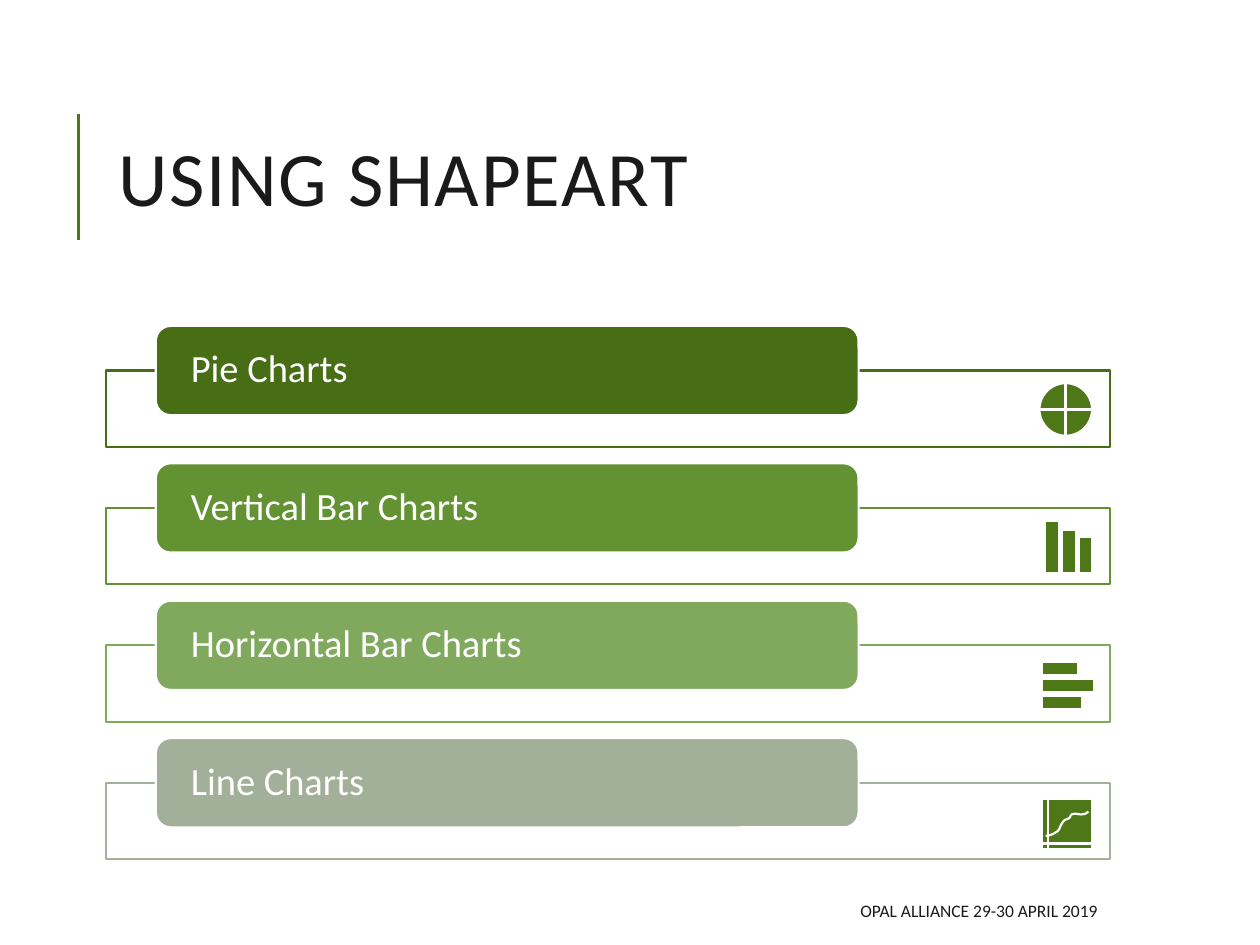
from dataclasses import dataclass

from lxml.etree import SubElement
from pptx import Presentation
from pptx.dml.color import RGBColor
from pptx.enum.shapes import MSO_CONNECTOR, MSO_SHAPE
from pptx.enum.text import MSO_ANCHOR, PP_ALIGN
from pptx.oxml.ns import qn
from pptx.util import Cm, Pt


@dataclass(frozen=True)
class Theme:
    """Hold the colours, font and type sizes."""
    font: str = "Calibri"
    ink: str = "1A1A1A"
    paper: str = "FFFFFF"
    accent: str = "4E7817"
    title: int = 44
    label: int = 22
    foot: int = 10


THEME = Theme()


def write(shape, text, size, color, align=PP_ALIGN.LEFT, lead=1.0, track=0, inset=None):
    """Set one middle-anchored paragraph of text in a shape."""
    frame = shape.text_frame
    frame.word_wrap = True
    frame.vertical_anchor = MSO_ANCHOR.MIDDLE
    if inset is not None:
        frame.margin_left = frame.margin_right = Cm(inset)
        frame.margin_top = frame.margin_bottom = 0
    para = frame.paragraphs[0]
    para.alignment = align
    para.line_spacing = lead
    run = para.add_run()
    run.text = text
    run.font.name = THEME.font
    run.font.size = Pt(size)
    run.font.color.rgb = RGBColor.from_string(color)
    if track:
        run._r.get_or_add_rPr().set("spc", str(track))


def place(slide, kind, x, y, w, h, fill, line, width=1.5):
    """Add a preset shape with a flat fill and outline."""
    shape = slide.shapes.add_shape(kind, Cm(x), Cm(y), Cm(w), Cm(h))
    shape.shadow.inherit = False
    shape.fill.solid()
    shape.fill.fore_color.rgb = RGBColor.from_string(fill)
    shape.line.color.rgb = RGBColor.from_string(line)
    shape.line.width = Pt(width)
    return shape


def mark(slide, kind, x, y, w, h):
    """Add one accent part of an icon."""
    return place(slide, kind, x, y, w, h, THEME.accent, THEME.paper)


def pie_icon(slide, x, y):
    """Draw a quartered disc."""
    mark(slide, MSO_SHAPE.FLOWCHART_OR, x - 0.05, y + 0.25, 1.07, 1.07)


def column_icon(slide, x, y):
    """Draw three columns on a shared base."""
    for i, tall in enumerate((1.07, 0.89, 0.74)):
        mark(slide, MSO_SHAPE.RECTANGLE, x + 0.07 + i * 0.34, y + 1.32 - tall, 0.28, tall)


def bar_icon(slide, x, y):
    """Draw three bars from a shared left edge."""
    for i, wide in enumerate((0.74, 1.07, 0.81)):
        mark(slide, MSO_SHAPE.RECTANGLE, x, y + 0.33 + i * 0.34, wide, 0.28)


def bend(a, b, c, d, steps=8):
    """Return points along a cubic curve, after its start."""
    spots = []
    for i in range(1, steps + 1):
        t = i / steps
        u = 1 - t
        spots.append(tuple(
            u**3 * p + 3 * u * u * t * q + 3 * u * t * t * r + t**3 * s
            for p, q, r, s in zip(a, b, c, d)))
    return spots


def line_icon(slide, x, y):
    """Draw a chart frame with a rising curve."""
    y += 0.33
    mark(slide, MSO_SHAPE.FLOWCHART_INTERNAL_STORAGE, x, y, 1.02, 1.02).rotation = 270
    knots = [(0.08, 0.74), (0.15, 0.74), (0.23, 0.71), (0.3, 0.66),
             (0.36, 0.64), (0.38, 0.51), (0.43, 0.46),
             (0.46, 0.41), (0.51, 0.41), (0.56, 0.38),
             (0.58, 0.36), (0.58, 0.3), (0.64, 0.3),
             (0.69, 0.28), (0.79, 0.33), (0.84, 0.3),
             (0.89, 0.3), (0.91, 0.28), (0.94, 0.25)]
    knots = [(Cm(x + p), Cm(y + q)) for p, q in knots]
    spots = [s for i in range(0, len(knots) - 1, 3) for s in bend(*knots[i:i + 4])]
    build = slide.shapes.build_freeform(*knots[0])
    build.add_line_segments(spots, close=False)
    curve = build.convert_to_shape()
    curve.shadow.inherit = False
    curve.fill.background()
    curve.line.color.rgb = RGBColor.from_string(THEME.paper)
    curve.line.width = Pt(1.25)


def header(slide, x, y, w, h, text):
    """Place the title with its upright rule."""
    rule = slide.shapes.add_connector(
        MSO_CONNECTOR.STRAIGHT, Cm(x - 0.55), Cm(y + 3.2), Cm(x - 0.55), Cm(y + 0.66))
    rule.line.color.rgb = RGBColor.from_string(THEME.accent)
    rule.line.width = Pt(1.5)
    SubElement(rule._element.spPr, qn("a:effectLst"))
    box = slide.shapes.add_textbox(Cm(x), Cm(y), Cm(w), Cm(h))
    write(box, text, THEME.title, THEME.ink, lead=0.8, track=100)


def row(slide, x, y, w, h, text, color):
    """Place an outlined panel with a label tab over its top edge."""
    panel = place(slide, MSO_SHAPE.RECTANGLE, x, y, w, h, THEME.paper, color, 1.25)
    tint = panel._element.spPr.find(qn("a:solidFill"))[0]
    SubElement(tint, qn("a:alpha")).set("val", "90000")
    tab = place(slide, MSO_SHAPE.ROUNDED_RECTANGLE, x + w * 0.05, y - 0.9,
                w * 0.7, 1.8, color, THEME.paper, 1.25)
    write(tab, text, THEME.label, THEME.paper, lead=0.9, inset=0.62)


def chart_list(slide, x, y, w, pitch):
    """Stack the chart rows, each with its icon at the right."""
    rows = (("Pie Charts", "476D15", pie_icon),
            ("Vertical Bar Charts", "639232", column_icon),
            ("Horizontal Bar Charts", "80A95D", bar_icon),
            ("Line Charts", "A2AF99", line_icon))
    for i, (text, color, icon) in enumerate(rows):
        top = y + i * pitch
        row(slide, x, top, w, 1.54, text, color)
        icon(slide, x + w - 1.37, top)


def footer(slide, x, y, w, h, text):
    """Place the right-aligned event line."""
    box = slide.shapes.add_textbox(Cm(x), Cm(y), Cm(w), Cm(h))
    write(box, text, THEME.foot, THEME.ink, align=PP_ALIGN.RIGHT)


def main():
    """Build and save the slide."""
    deck = Presentation()
    deck.slide_width, deck.slide_height = Cm(25.4), Cm(19.05)
    slide = deck.slides.add_slide(deck.slide_layouts[6])
    header(slide, 2.13, 1.63, 20.24, 4.17, "USING SHAPEART")
    chart_list(slide, 2.13, 7.47, 20.24, 2.77)
    footer(slide, 10.08, 17.98, 12.29, 0.76, "OPAL ALLIANCE 29-30 APRIL 2019")
    deck.save("out.pptx")


if __name__ == "__main__":
    main()
